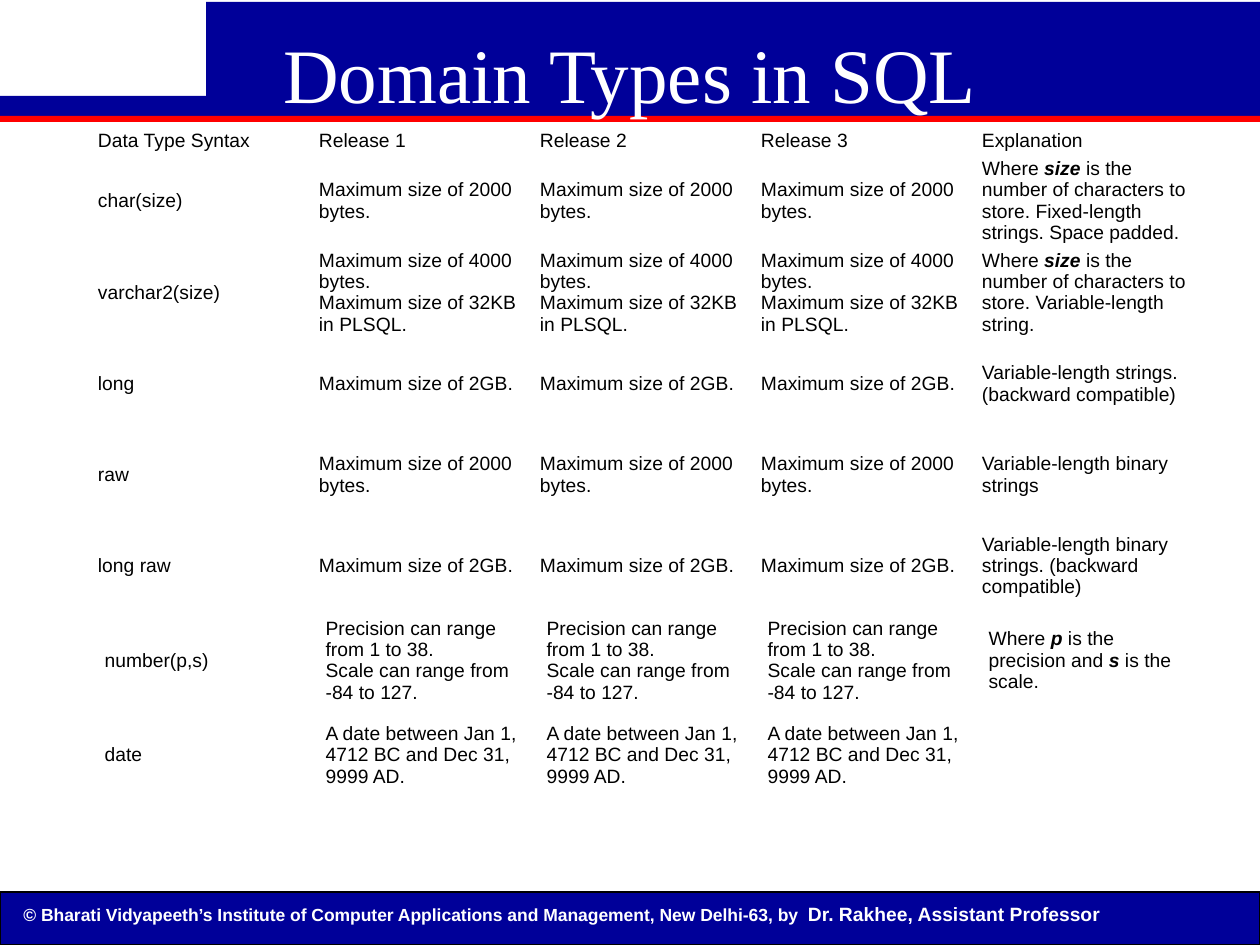
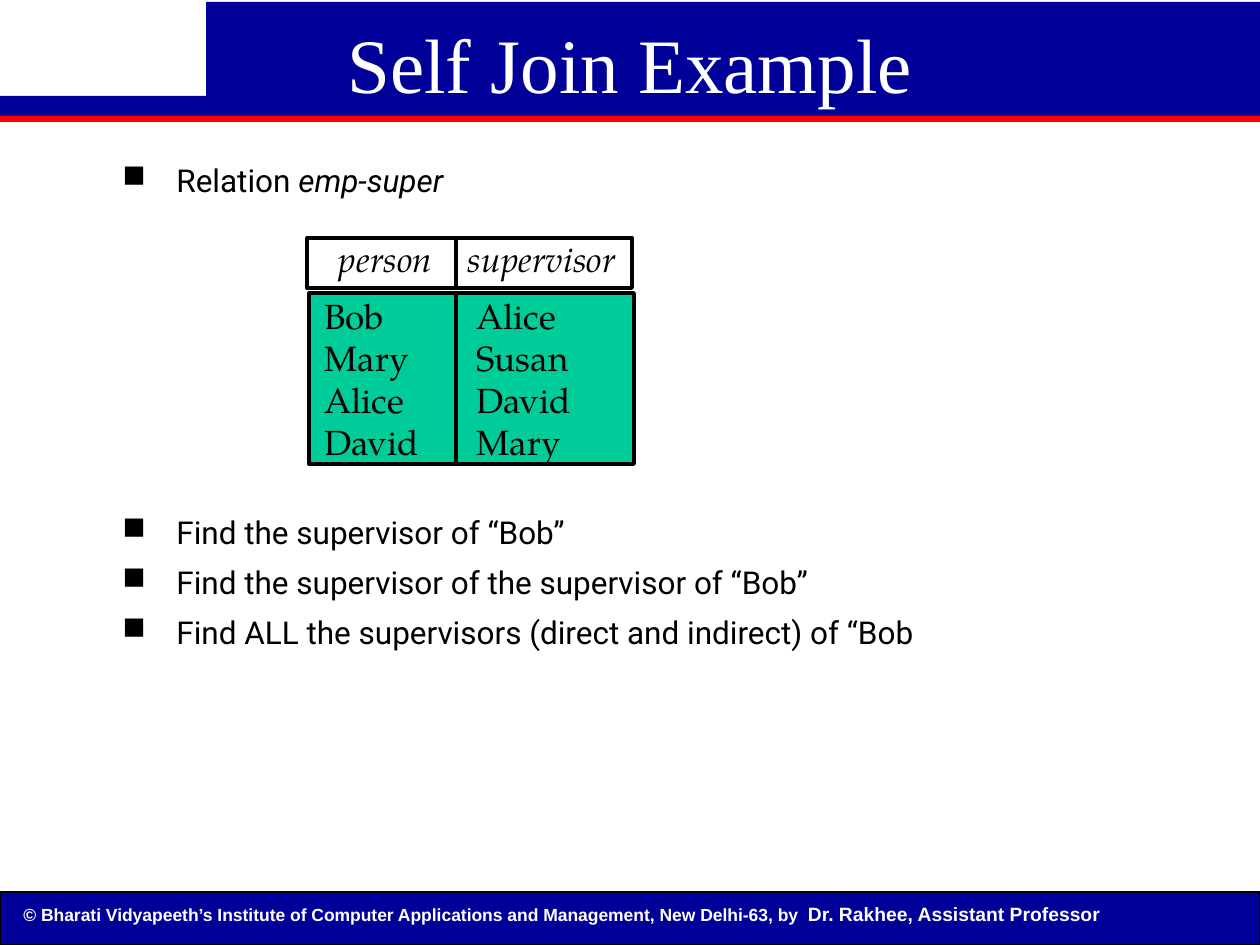
from pptx import Presentation
from pptx.dml.color import RGBColor
from pptx.enum.shapes import MSO_CONNECTOR, MSO_SHAPE
from pptx.enum.text import MSO_ANCHOR, MSO_AUTO_SIZE, PP_ALIGN
from pptx.oxml.ns import qn
from pptx.util import Emu, Pt
from lxml import etree

RECTANGLE = MSO_SHAPE.RECTANGLE
STRAIGHT = MSO_CONNECTOR.STRAIGHT
TOP, MIDDLE = MSO_ANCHOR.TOP, MSO_ANCHOR.MIDDLE
NO_AUTOFIT = MSO_AUTO_SIZE.NONE
CENTER = PP_ALIGN.CENTER

NAVY = RGBColor(0x00, 0x00, 0x99)
RED = RGBColor(0xFF, 0x00, 0x00)
GREEN = RGBColor(0x00, 0xCC, 0x99)
WHITE = RGBColor(0xFF, 0xFF, 0xFF)
BLACK = RGBColor(0x00, 0x00, 0x00)

PX_PER_INCH = 126
PAGE_WIDTH, PAGE_HEIGHT = 1260, 945
TITLE_ONLY = 5

TITLE_STYLE = {"name": "Times New Roman", "size": Pt(44), "color": WHITE}
FOOTER_STYLE = {"name": "Arial", "size": Pt(10), "color": WHITE, "bold": True}
CELL_STYLE = {"name": "Arial", "size": Pt(11), "color": BLACK}
BULLET_STYLE = {"name": "Roboto", "size": Pt(18), "color": BLACK}
RELATION_STYLE = {"name": "TeX Gyre Pagella", "size": Pt(20), "color": BLACK}
BOLD_ITALIC = {"bold": True, "italic": True}
ITALIC = {"italic": True}

FOOTER = ("© Bharati Vidyapeeth’s Institute of Computer Applications and Management, "
          "New Delhi-63, by * Dr. Rakhee, Assistant Professor*")

# Data type, size limit in every version, explanation
DATA_TYPES = [
    ("char(size)", "Maximum size of 2000 bytes.",
     "Where *size* is the number of characters to store. Fixed-length strings. Space padded."),
    ("varchar2(size)", "Maximum size of 4000 bytes.\nMaximum size of 32KB in PLSQL.",
     "Where *size* is the number of characters to store. Variable-length string."),
    ("long", "Maximum size of 2GB.", "Variable-length strings. (backward compatible)"),
    ("raw", "Maximum size of 2000 bytes.", "Variable-length binary strings"),
    ("long raw", "Maximum size of 2GB.",
     "Variable-length binary strings. (backward compatible)"),
    ("number(p,s)", "Precision can range from 1 to 38.\nScale can range from -84 to 127.",
     "Where *p* is the precision and *s* is the scale."),
    ("date", "A date between Jan 1, 4712 BC and Dec 31, 9999 AD.", ""),
]
VERSIONS = ["Release 1", "Release 2", "Release 3"]
WIDE_INSET_TYPES = ("number(p,s)", "date")

SUPERVISORS = [("Bob", "Alice"), ("Mary", "Susan"), ("Alice", "David"), ("David", "Mary")]
QUESTIONS = [
    "Find the supervisor of “Bob”",
    "Find the supervisor of the supervisor of “Bob”",
    "Find ALL the supervisors (direct and indirect) of “Bob",
]


def px(length):
    return Emu(round(length * 914400 / PX_PER_INCH))


def set_font(font, style):
    for key, value in style.items():
        if key == "color":
            font.color.rgb = value
        else:
            setattr(font, key, value)


def write_lines(frame, lines, style, emphasis=None):
    """Write one paragraph per line; parts between asterisks take the emphasis."""
    for number, line in enumerate(lines):
        para = frame.add_paragraph() if number else frame.paragraphs[0]
        set_font(para.font, style)
        for position, part in enumerate(line.split("*")):
            if part:
                span = para.add_run()
                span.text = part
                set_font(span.font, {**style, **(emphasis or {})} if position % 2 else style)


def add_box(page, left, top, width, height, fill, line=None, line_width=0.75):
    box = page.shapes.add_shape(RECTANGLE, px(left), px(top), px(width), px(height))
    box.shadow.inherit = False
    box.fill.solid()
    box.fill.fore_color.rgb = fill
    if line is None:
        box.line.fill.background()
    else:
        box.line.color.rgb = line
        box.line.width = Pt(line_width)
    return box


def add_text(page, left, top, width, height, lines, style, emphasis=None):
    box = page.shapes.add_textbox(px(left), px(top), px(width), px(height))
    box.text_frame.word_wrap = True
    write_lines(box.text_frame, lines, style, emphasis)
    return box


def add_page(deck, title, title_top, title_height):
    """Add a slide with the shared bands, footer and title."""
    page = deck.slides.add_slide(deck.slide_layouts[TITLE_ONLY])
    heading = page.shapes.title
    frame_parts = [
        add_box(page, 0, 96, PAGE_WIDTH, 20, NAVY),
        add_box(page, 0, 116, PAGE_WIDTH, 6, RED),
        add_box(page, 206, 2, PAGE_WIDTH - 206, 96, NAVY),
        add_box(page, 0, 892, PAGE_WIDTH, PAGE_HEIGHT - 892, NAVY, BLACK),
        add_text(page, 11, 896, 1207, 37, [FOOTER], FOOTER_STYLE, {"size": Pt(11)}),
    ]
    for part in frame_parts:
        heading.element.addprevious(part.element)

    heading.left, heading.top = px(63), px(title_top)
    heading.width, heading.height = px(1134), px(title_height)
    frame = heading.text_frame
    frame.auto_size = NO_AUTOFIT
    frame.vertical_anchor = TOP
    frame.margin_top = px(16)
    write_lines(frame, [title], TITLE_STYLE)
    frame.paragraphs[0].alignment = CENTER
    return page


def add_type_table(page, left, top, width, header_height, row_height):
    rows = [["Data Type Syntax", *VERSIONS, "Explanation"]]
    rows += [[name, *[limit] * len(VERSIONS), note] for name, limit, note in DATA_TYPES]
    height = header_height + row_height * len(DATA_TYPES)
    table = page.shapes.add_table(len(rows), len(rows[0]), px(left), px(top),
                                  px(width), px(height)).table
    table.first_row = table.horz_banding = False
    for column in table.columns:
        column.width = px(width / len(rows[0]))
    for number, (row, texts) in enumerate(zip(table.rows, rows)):
        row.height = px(row_height if number else header_height)
        for cell, text in zip(row.cells, texts):
            cell.fill.background()
            cell.vertical_anchor = MIDDLE
            if texts[0] not in WIDE_INSET_TYPES:
                cell.margin_left = cell.margin_right = px(6)
                cell.margin_top = cell.margin_bottom = px(3)
            write_lines(cell.text_frame, text.split("\n"), CELL_STYLE, BOLD_ITALIC)


def add_bullets(page, left, top, width, height, lines):
    box = add_text(page, left, top, width, height, lines, BULLET_STYLE, ITALIC)
    for number, para in enumerate(box.text_frame.paragraphs):
        properties = para._p.get_or_add_pPr()
        properties.set("marL", str(px(54)))
        properties.set("indent", str(-px(54)))
        if number:
            para.space_before = Pt(7)
        defaults = properties.find(qn("a:defRPr"))
        color = etree.Element(qn("a:buClr"))
        etree.SubElement(color, qn("a:srgbClr"), val=str(BLACK))
        for element in (color, etree.Element(qn("a:buChar"), char="■")):
            defaults.addprevious(element)


def add_divider(page, x, top, bottom):
    divider = page.shapes.add_connector(STRAIGHT, px(x), px(top), px(x), px(bottom))
    divider.line.color.rgb = BLACK
    divider.line.width = Pt(2.25)
    etree.SubElement(divider.element.spPr, qn("a:effectLst"))


def add_column_text(page, left, top, width, height, rows, tab, style):
    """Write rows of two columns, the second one starting at the tab stop."""
    box = add_text(page, left, top, width, height, ["\t".join(row) for row in rows], style)
    for para in box.text_frame.paragraphs:
        stops = etree.Element(qn("a:tabLst"))
        etree.SubElement(stops, qn("a:tab"), pos=str(px(tab)), algn="l")
        para._p.pPr.find(qn("a:defRPr")).addprevious(stops)
    return box


def add_relation(page, left, top):
    """Draw the relation with its heading row above its coloured rows."""
    width, divider = 325, left + 149
    add_box(page, left, top, width, 50, WHITE, BLACK, 2.25)
    add_box(page, left + 2, top + 55, width, 171, GREEN, BLACK, 2.25)
    add_divider(page, divider, top, top + 50)
    add_divider(page, divider, top + 56, top + 226)
    heading = add_column_text(page, left + 13, top - 7, width, 55,
                              [("person", "supervisor")], 129, {**RELATION_STYLE, **ITALIC})
    heading.text_frame.margin_left = px(19)
    add_column_text(page, left + 5, top + 50, width - 4, 183, SUPERVISORS, 152, RELATION_STYLE)


def build_domain_types(deck):
    page = add_page(deck, "Domain Types in SQL", 10, 158)
    add_type_table(page, 92, 126, 1105, 29, 91)


def build_self_join(deck):
    page = add_page(deck, "Self Join Example", 0, 120)
    add_bullets(page, 110, 155, 969, 67, ["Relation *emp-super*"])
    add_bullets(page, 110, 507, 1143, 154, QUESTIONS)
    add_relation(page, 307, 238)


def main():
    deck = Presentation()
    deck.slide_width, deck.slide_height = px(PAGE_WIDTH), px(PAGE_HEIGHT)
    build_domain_types(deck)
    build_self_join(deck)
    deck.save("out.pptx")


if __name__ == "__main__":
    main()
